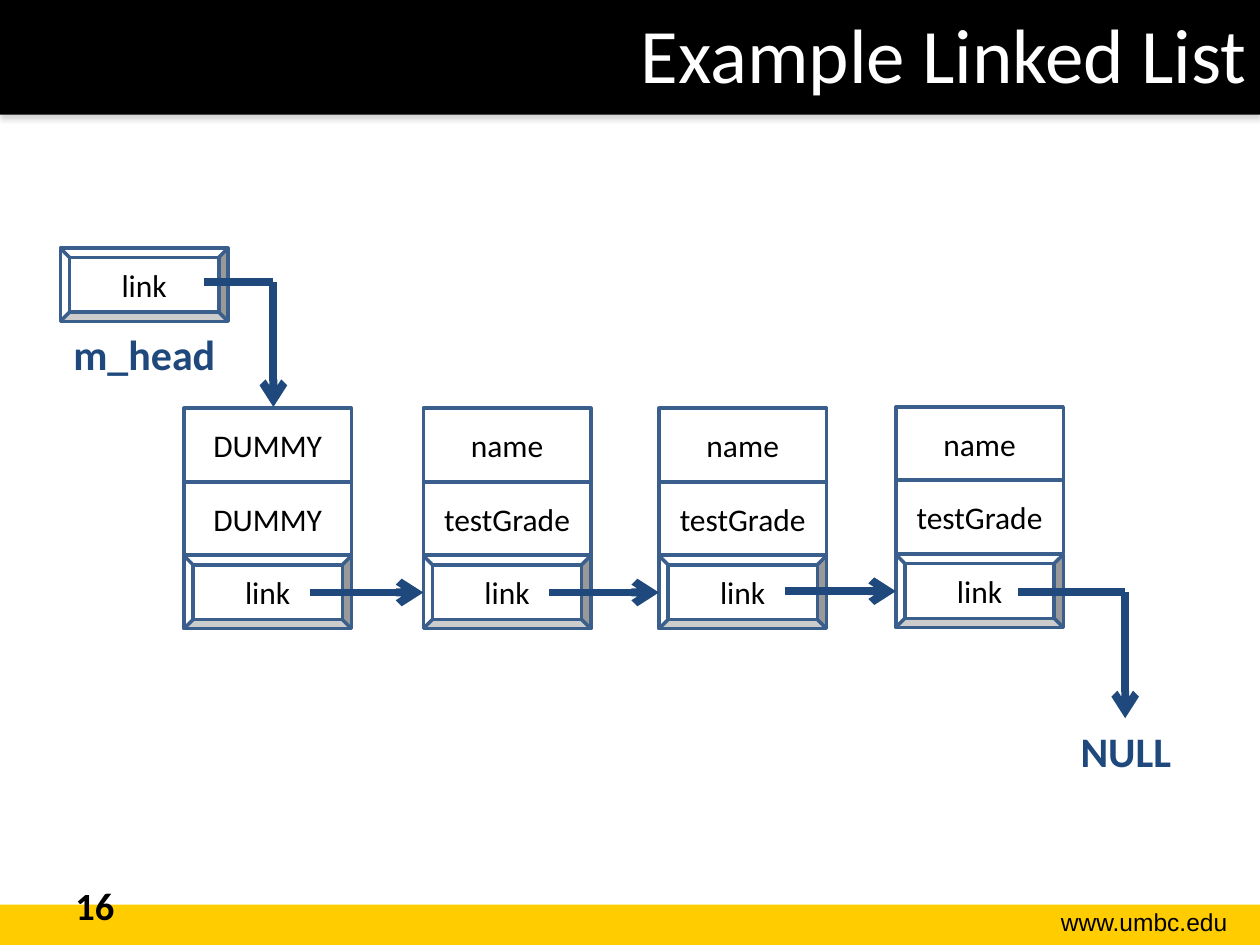
from pptx import Presentation
from pptx.dml.color import RGBColor
from pptx.enum.shapes import MSO_CONNECTOR, MSO_SHAPE
from pptx.enum.text import MSO_ANCHOR, PP_ALIGN
from pptx.oxml import parse_xml
from pptx.oxml.ns import nsdecls
from pptx.util import Inches, Pt

COLORS = {
    "black": "000000",
    "white": "FFFFFF",
    "gold": "FFCC00",
    "navy": "1F497D",
    "edge": "3A5F8C",
    "shade": "808080",
}
CELL_W, CELL_H = 1.33, 0.58
PITCH = 0.585


def color(name):
    return RGBColor.from_string(COLORS[name])


def write(frame, text, size, tint, align, bold=False, face="Calibri"):
    frame.word_wrap = True
    line = frame.paragraphs[0]
    line.text = text
    line.alignment = align
    line.font.size = Pt(size)
    line.font.name = face
    line.font.bold = bold
    line.font.color.rgb = color(tint)


def label(slide, box, *style, **extra):
    frame = slide.shapes.add_textbox(*map(Inches, box)).text_frame
    write(frame, *style, **extra)


def block(slide, box, fill, kind=MSO_SHAPE.RECTANGLE):
    shape = slide.shapes.add_shape(kind, *map(Inches, box))
    shape.shadow.inherit = False
    shape.fill.solid()
    shape.fill.fore_color.rgb = color(fill)
    shape.line.fill.background()
    return shape


def header(slide, box):
    bar = block(slide, box, "black")
    effects = bar._element.spPr.find(
        "{http://schemas.openxmlformats.org/drawingml/2006/main}effectLst")
    effects.append(parse_xml(
        f'<a:outerShdw {nsdecls("a")} blurRad="{Pt(3.1)}" dist="{Pt(1.8)}" '
        f'dir="5400000" rotWithShape="0"><a:srgbClr val="{COLORS["shade"]}">'
        '<a:alpha val="35000"/></a:srgbClr></a:outerShdw>'))
    left, top, width, _ = box
    label(slide, (left + 1, top, width - 1, 1.25), "Example Linked List",
          44, "white", PP_ALIGN.RIGHT)


def footer(slide, box):
    block(slide, box, "gold")
    left, top, _, _ = box
    label(slide, (left + 7.85, top - 0.03, 1.99, 0.34), "www.umbc.edu",
          14, "black", PP_ALIGN.RIGHT, face="Arial")
    label(slide, (left + 0.5, top - 0.23, 2.33, 0.4), "16",
          22, "black", PP_ALIGN.LEFT, bold=True)


def cell(slide, left, top, text, kind=MSO_SHAPE.RECTANGLE):
    shape = block(slide, (left, top, CELL_W, CELL_H), "white", kind)
    shape.line.color.rgb = color("edge")
    shape.line.width = Pt(2)
    shape.text_frame.vertical_anchor = MSO_ANCHOR.MIDDLE
    write(shape.text_frame, text, 18, "black", PP_ALIGN.CENTER)


def node(slide, left, top, names):
    cell(slide, left, top + 2 * PITCH, "link", MSO_SHAPE.BEVEL)
    for row, name in enumerate(names):
        cell(slide, left, top + row * PITCH, name)


def arrow(slide, start, end, tip=True):
    line = slide.shapes.add_connector(
        MSO_CONNECTOR.STRAIGHT, *map(Inches, (*start, *end)))
    line.line.color.rgb = color("navy")
    line.line.width = Pt(4.5)
    if tip:
        line.line._get_or_add_ln().append(
            parse_xml(f'<a:tailEnd {nsdecls("a")} type="arrow"/>'))
    line._element.spPr.append(parse_xml(f'<a:effectLst {nsdecls("a")}/>'))


def elbow(slide, start, end):
    turn = (end[0], start[1])
    arrow(slide, turn, end)
    arrow(slide, start, turn, tip=False)


def chain(slide):
    data = ("name", "testGrade")
    nodes = [
        (1.46, 3.24, ("DUMMY", "DUMMY")),
        (3.36, 3.24, data),
        (5.23, 3.24, data),
        (7.11, 3.23, data),
    ]
    for left, top, names in nodes:
        node(slide, left, top, names)
    for (left, _, _), (goal, top, _) in zip(nodes, nodes[1:]):
        level = top + 2.5 * PITCH
        arrow(slide, (left + 1, level), (goal, level))
    elbow(slide, (8.08, 4.7), (8.93, 5.7))
    label(slide, (8.16, 5.71, 1.55, 0.51), "NULL",
          24, "navy", PP_ALIGN.CENTER, bold=True)


def head(slide, left, top):
    cell(slide, left, top, "link", MSO_SHAPE.BEVEL)
    elbow(slide, (left + 1.14, top + 0.27), (left + 1.69, top + 1.26))
    label(slide, (left - 0.11, top + 0.59, 1.55, 0.51), "m_head",
          24, "navy", PP_ALIGN.CENTER, bold=True)


def main():
    deck = Presentation()
    deck.slide_width, deck.slide_height = Inches(10), Inches(7.5)
    slide = deck.slides.add_slide(deck.slide_layouts[6])
    footer(slide, (0, 7.18, 10, 0.32))
    header(slide, (0, 0, 10, 0.91))
    chain(slide)
    head(slide, 0.48, 1.97)
    deck.save("out.pptx")


if __name__ == "__main__":
    main()
